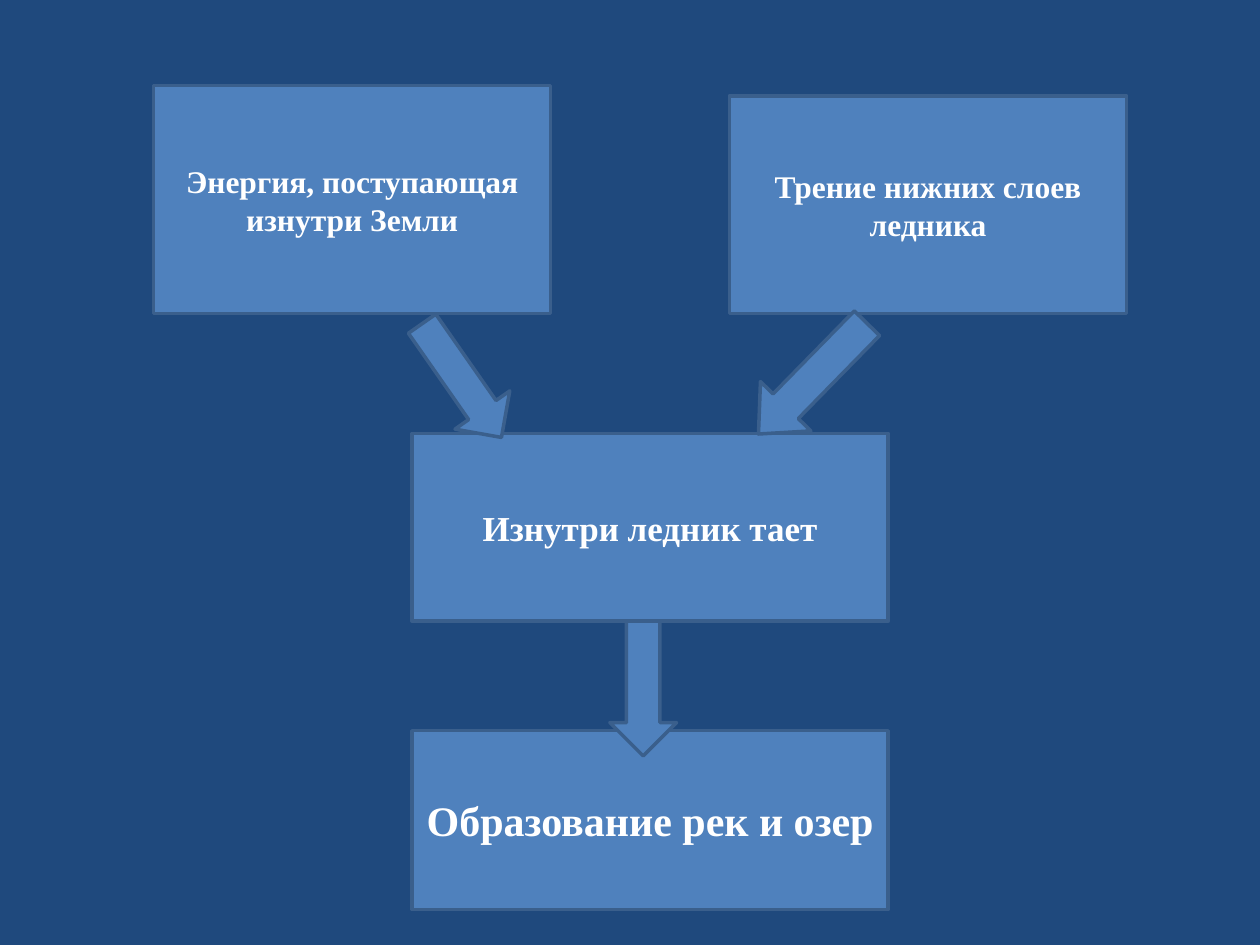
"""Draw a flow of causes that melt a glacier from within."""
from typing import NamedTuple

from pptx import Presentation
from pptx.dml.color import RGBColor
from pptx.enum.shapes import MSO_SHAPE as Kind
from pptx.enum.text import MSO_ANCHOR as Anchor, PP_ALIGN as Align
from pptx.util import Inches, Pt

WIDE, HIGH = Inches(10), Inches(7.5)
BACK, FILL, EDGE, INK = "1F497D", "4F81BD", "3A5F8C", "FFFFFF"
FONT = "Times New Roman"


class Area(NamedTuple):
    left: float
    top: float
    width: float
    height: float


class Box(NamedTuple):
    area: Area
    text: str
    size: int


class Arrow(NamedTuple):
    area: Area
    turn: float = 0
    head: float = 0.5


BOXES = [
    Box(Area(12.2, 9.07, 31.5, 24.13), "Энергия, поступающая изнутри Земли", 18),
    Box(Area(57.9, 10.13, 31.5, 23.07), "Трение нижних слоев ледника", 18),
    Box(Area(32.7, 45.87, 37.8, 19.87), "Изнутри ледник тает", 20),
    Box(Area(32.7, 77.33, 37.8, 18.93), "Образование рек и озер", 24),
]
ARROWS = [
    Arrow(Area(34, 32.93, 5.3, 14.67), turn=325.1),
    Arrow(Area(61.7, 31.87, 5.6, 16.4), turn=44.4, head=0.55),
    Arrow(Area(48.4, 65.73, 5.3, 14.27)),
]


def paint(fill, tone: str) -> None:
    fill.solid()
    fill.fore_color.rgb = RGBColor.from_string(tone)


def add_form(slide, kind: Kind, area: Area):
    shape = slide.shapes.add_shape(
        kind,
        round(WIDE * area.left / 100),
        round(HIGH * area.top / 100),
        round(WIDE * area.width / 100),
        round(HIGH * area.height / 100),
    )
    shape.shadow.inherit = False
    paint(shape.fill, FILL)
    paint(shape.line.fill, EDGE)
    shape.line.width = Pt(2)
    return shape


def add_box(slide, box: Box) -> None:
    frame = add_form(slide, Kind.RECTANGLE, box.area).text_frame
    frame.word_wrap = True
    frame.vertical_anchor = Anchor.MIDDLE
    para = frame.paragraphs[0]
    para.text = box.text
    para.alignment = Align.CENTER
    font = para.font
    font.name, font.size, font.bold = FONT, Pt(box.size), True
    paint(font.fill, INK)


def add_arrow(slide, arrow: Arrow) -> None:
    shape = add_form(slide, Kind.DOWN_ARROW, arrow.area)
    shape.rotation = arrow.turn
    shape.adjustments[1] = arrow.head


def main() -> None:
    deck = Presentation()
    deck.slide_width, deck.slide_height = WIDE, HIGH
    slide = deck.slides.add_slide(deck.slide_layouts[6])
    paint(slide.background.fill, BACK)
    for box in BOXES:
        add_box(slide, box)
    for arrow in ARROWS:
        add_arrow(slide, arrow)
    deck.save("out.pptx")


if __name__ == "__main__":
    main()
